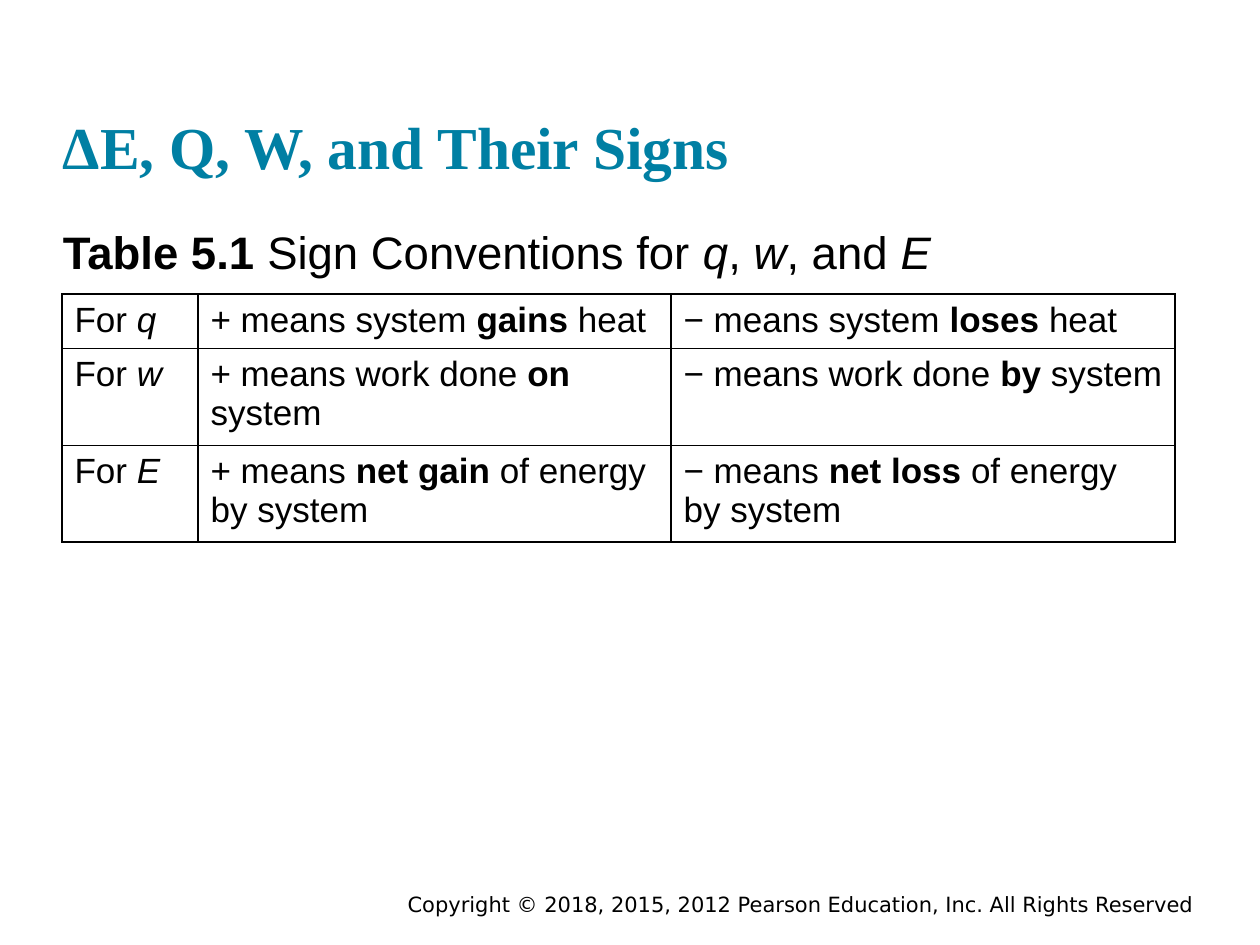
from dataclasses import dataclass

from lxml.etree import SubElement
from pptx import Presentation
from pptx.dml.color import RGBColor
from pptx.enum.text import MSO_ANCHOR as Anchor, PP_ALIGN as Align
from pptx.oxml.ns import qn
from pptx.util import Emu, Pt

EMU_PER_PX = 914400 / 126


def px(length):
    return Emu(round(length * EMU_PER_PX))


@dataclass(frozen=True)
class Theme:
    ink: str = "000000"
    accent: str = "007FA3"
    heading_font: str = "Times New Roman"
    body_font: str = "Arial"
    footer_font: str = "DejaVu Sans"
    title_size: int = 34
    caption_size: int = 26
    cell_size: int = 20
    footer_size: int = 12
    border_width: int = 1


class SlideBuilder:
    def __init__(self, slide, theme):
        self.slide = slide
        self.theme = theme

    def add_runs(self, paragraph, pieces, size, font, color):
        for words, style in pieces:
            run = paragraph.add_run()
            run.text = words
            run.font.name = font
            run.font.size = Pt(size)
            run.font.color.rgb = RGBColor.from_string(color)
            run.font.bold = style == "bold"
            run.font.italic = style == "italic"

    def text(self, box, pieces, size, font, color, insets=(0, 0, 0, 0),
             anchor=Anchor.TOP, align=Align.LEFT):
        frame = self.slide.shapes.add_textbox(*map(px, box)).text_frame
        frame.word_wrap = True
        frame.vertical_anchor = anchor
        (frame.margin_left, frame.margin_top,
         frame.margin_right, frame.margin_bottom) = map(px, insets)
        paragraph = frame.paragraphs[0]
        paragraph.alignment = align
        self.add_runs(paragraph, pieces, size, font, color)

    def border(self, cell):
        properties = cell._tc.get_or_add_tcPr()
        for side in ("a:lnL", "a:lnR", "a:lnT", "a:lnB"):
            line = SubElement(properties, qn(side),
                              w=str(Pt(self.theme.border_width)))
            fill = SubElement(line, qn("a:solidFill"))
            SubElement(fill, qn("a:srgbClr"), val=self.theme.ink)

    def table(self, left, top, widths, heights, rows):
        table = self.slide.shapes.add_table(
            len(heights), len(widths), px(left), px(top),
            px(sum(widths)), px(sum(heights))).table
        table.first_row = table.horz_banding = False
        for column, width in zip(table.columns, widths):
            column.width = px(width)
        for row, height, contents in zip(table.rows, heights, rows):
            row.height = px(height)
            for cell, pieces in zip(row.cells, contents):
                self.border(cell)
                cell.fill.background()
                self.add_runs(cell.text_frame.paragraphs[0], pieces,
                              self.theme.cell_size, self.theme.body_font,
                              self.theme.ink)


def sign_row(symbol, gain, loss):
    return [
        [("For ", ""), (symbol, "italic")],
        *([(f"{sign} means {before}", ""), (key, "bold"), (after, "")]
          for sign, (before, key, after) in (("+", gain), ("−", loss))),
    ]


def main():
    theme = Theme()
    deck = Presentation()
    deck.slide_width, deck.slide_height = px(1260), px(945)
    builder = SlideBuilder(deck.slides.add_slide(deck.slide_layouts[6]), theme)

    builder.text((221, 886, 986, 38),
                 [("Copyright © 2018, 2015, 2012 Pearson Education, Inc. "
                   "All Rights Reserved", "")],
                 theme.footer_size, theme.footer_font, theme.ink,
                 insets=(13, 6, 13, 6), align=Align.RIGHT)
    builder.text((63, 30, 1134, 151), [("ΔE, Q, W, and Their Signs", "bold")],
                 theme.title_size, theme.heading_font, theme.accent,
                 anchor=Anchor.BOTTOM)
    builder.text((63, 220, 1134, 53),
                 [("Table 5.1 ", "bold"), ("Sign Conventions for ", ""),
                  ("q", "italic"), (", ", ""), ("w", "italic"),
                  (", and ", ""), ("E", "italic")],
                 theme.caption_size, theme.body_font, theme.ink,
                 insets=(0, 4, 0, 0))

    sign_conventions = [
        sign_row("q", ("system ", "gains", " heat"),
                 ("system ", "loses", " heat")),
        sign_row("w", ("work done ", "on", " system"),
                 ("work done ", "by", " system")),
        sign_row("E", ("", "net gain", " of energy by system"),
                 ("", "net loss", " of energy by system")),
    ]
    builder.table(62, 294, (136, 473, 504), (52, 91, 91), sign_conventions)
    deck.save("out.pptx")


if __name__ == "__main__":
    main()
